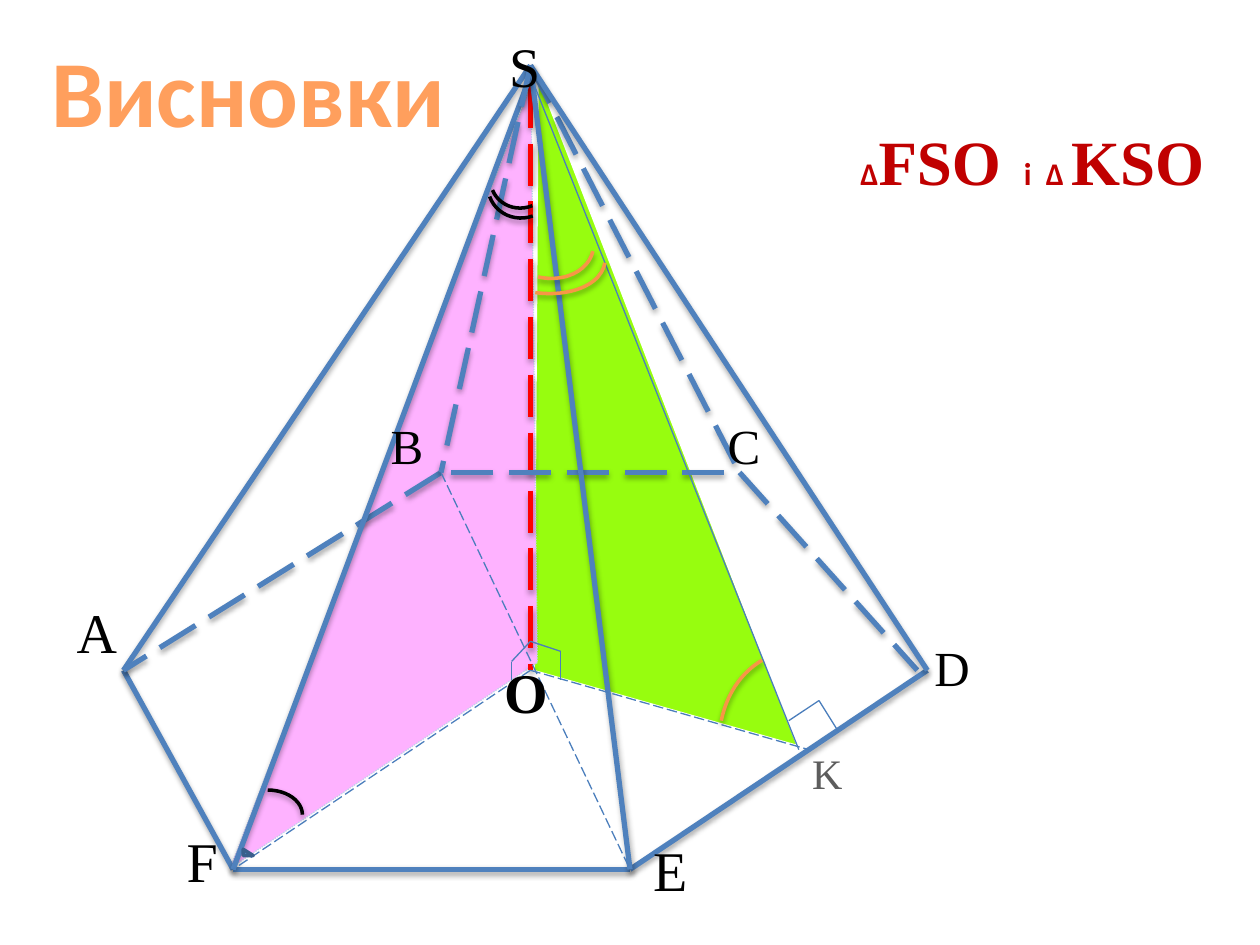
import pptx
import pptx.dml.color
import pptx.enum.dml
import pptx.enum.shapes
import pptx.enum.text
import pptx.oxml
import pptx.oxml.ns
import pptx.util

Inches = pptx.util.Inches
Pt = pptx.util.Pt
Shape = pptx.enum.shapes.MSO_SHAPE
Dash = pptx.enum.dml.MSO_LINE
Align = pptx.enum.text.PP_ALIGN

COLORS = {
    "edge": "4F81BD", "thin": "4B7EBC", "height": "FF0000",
    "green": "97FD0F", "pink": "FEB2FF", "white": "FFFFFF", "pale": "C2D1ED",
    "corner": "3A5F8C", "black": "000000", "orange": "F79646",
    "title": "FF9F5D", "grey": "5D5D5D", "red": "C00000",
}

# Points of the pyramid, in inches from the corner of its box
POINTS = {
    "A": (0, 4.8), "B": (2.52, 3.23), "C": (4.89, 3.23), "D": (6.38, 4.8),
    "E": (4.02, 6.38), "F": (0.87, 6.38), "S": (3.23, 0), "O": (3.23, 4.8),
    "K": (5.36, 5.43),
    # Line ends set slightly off a vertex
    "S low": (3.23, 0.08), "S inner": (3.23, 0.16), "B right": (2.6, 3.23),
    "D left": (6.3, 4.8), "K right": (5.44, 5.43),
}
EDGES = [  # from, to, hidden
    ("A", "F", False), ("F", "E", False), ("A", "S", False),
    ("S", "C", True), ("C", "D left", True), ("B", "A", True),
    ("B right", "C", True), ("D", "E", False), ("S", "D", False),
    ("S", "E", False), ("S low", "F", False), ("S", "B", True),
]
THIN_LINES = [  # from, to, dashed
    ("O", "F", True), ("S low", "K", False), ("O", "K right", True),
    ("B", "E", True),
]
RIGHT_ANGLES = [
    [(3.08, 4.88), (3.08, 4.73), (3.23, 4.57), (3.47, 4.65), (3.47, 4.88)],
    [(5.28, 5.2), (5.52, 5.04), (5.67, 5.28)],
]
ARCS = [  # place, rotation, colour
    ((0.87, 5.75, 0.55, 0.39), 0, "black"),
    ((2.91, 0.66, 0.49, 0.47), 157.5, "black"),
    ((2.89, 0.69, 0.54, 0.52), 160.3, "black"),
    ((3, 0.98, 0.62, 1.03), 97.8, "orange"),
    ((3.06, 1.01, 0.59, 0.76), 102.7, "orange"),
]
LABELS = [  # letter, place, size, bold, colour
    ("S", (2.9, -0.32, 0.57, 0.63), 31.9, False, "black"),
    ("A", (-0.47, 4.17, 0.31, 0.64), 32, False, "black"),
    ("B", (1.74, 2.73, 1.02, 0.57), 28, False, "black"),
    ("C", (4.49, 2.73, 0.87, 0.57), 28, False, "black"),
    ("D", (6.22, 4.49, 0.71, 0.57), 28, False, "black"),
    ("Е", (4.1, 6.06, 0.48, 0.64), 32, False, "black"),
    ("F", (0.4, 5.99, 0.45, 0.64), 32, False, "black"),
    ("O", (2.92, 4.65, 0.55, 0.64), 32, True, "black"),
    ("K", (5.36, 5.36, 0.45, 0.5), 24, False, "grey"),
]


def rgb(name):
    return pptx.dml.color.RGBColor.from_string(COLORS[name])


def set_effects(item, shadow):
    """Give the item its own effect list, empty or with a soft shadow."""
    properties = item._element.spPr
    for old in properties.findall(pptx.oxml.ns.qn("a:effectLst")):
        properties.remove(old)
    inner = (
        '<a:outerShdw blurRad="40000" dist="23000" dir="5400000" rotWithShape="0">'
        '<a:srgbClr val="000000"><a:alpha val="35000"/></a:srgbClr></a:outerShdw>'
    ) if shadow else ""
    properties.append(pptx.oxml.parse_xml(
        f'<a:effectLst {pptx.oxml.ns.nsdecls("a")}>{inner}</a:effectLst>'))


def add_line(page, box, start, end, color, width, dashed=False, shadow=False):
    left, top = box[:2]
    line = page.shapes.add_connector(
        pptx.enum.shapes.MSO_CONNECTOR.STRAIGHT,
        Inches(left + start[0]), Inches(top + start[1]),
        Inches(left + end[0]), Inches(top + end[1]))
    line.line.color.rgb = rgb(color)
    line.line.width = Pt(width)
    if dashed:
        line.line.dash_style = Dash.LONG_DASH
    set_effects(line, shadow)


def add_figure(page, box, kind, place, fill, line, width, rotation=0,
               flips=(), adjustments=(), shadow=False):
    x, y, wide, high = place
    shape = page.shapes.add_shape(
        kind, Inches(box[0] + x), Inches(box[1] + y), Inches(wide), Inches(high))
    shape.rotation = rotation
    for flip in flips:
        shape._element.spPr.xfrm.set(flip, "1")
    for index, value in enumerate(adjustments):
        shape.adjustments[index] = value
    if fill:
        shape.fill.solid()
        shape.fill.fore_color.rgb = rgb(fill)
    else:
        shape.fill.background()
    shape.line.color.rgb = rgb(line)
    shape.line.width = Pt(width)
    set_effects(shape, shadow)
    return shape


def add_text(page, box, spans, align=Align.CENTER, wrap=True):
    """Spans are (text, size, font, bold, colour)."""
    text_box = page.shapes.add_textbox(*[Inches(length) for length in box])
    text_box.text_frame.word_wrap = wrap
    para = text_box.text_frame.paragraphs[0]
    para.alignment = align
    for text, size, font, bold, color in spans:
        span = para.add_run()
        span.text = text
        span.font.size = Pt(size)
        span.font.name = font
        span.font.bold = bold
        span.font.color.rgb = rgb(color)


def draw_triangles(page, box):
    add_figure(page, box, Shape.ISOSCELES_TRIANGLE, (0.63, 2.17, 5.75, 1.75),
               "green", "white", 2, 248.8, ["flipH"], [0.77])
    pink = add_figure(page, box, Shape.ISOSCELES_TRIANGLE, (-0.5, 2.72, 6.66, 1.69),
                      "pink", "pale", 0, 291, ["flipH", "flipV"], [0.64])
    pink.line.dash_style = Dash.ROUND_DOT


def draw_lines(page, box):
    add_line(page, box, POINTS["S inner"], POINTS["O"], "height", 3, True, True)
    for start, end, hidden in EDGES:
        add_line(page, box, POINTS[start], POINTS[end], "edge", 3, hidden, True)
    for start, end, dashed in THIN_LINES:
        add_line(page, box, POINTS[start], POINTS[end], "thin", 0.75, dashed)
    for corners in RIGHT_ANGLES:
        for start, end in zip(corners, corners[1:]):
            add_line(page, box, start, end, "thin", 0.75)


def draw_angles(page, box):
    for place, rotation, color in ARCS:
        add_figure(page, box, Shape.ARC, place, None, color, 2, rotation, shadow=True)
    # Angle at K
    add_figure(page, box, Shape.ARC, (4.73, 4.65, 1.2, 1.42), None, "orange", 2,
               flips=["flipH"], adjustments=[175.3, 206.79], shadow=True)


def draw_pyramid(page, box):
    draw_triangles(page, box)
    draw_lines(page, box)
    # Small mark at F
    add_figure(page, box, Shape.RIGHT_TRIANGLE, (0.95, 6.22, 0.08, 0.05),
               "edge", "corner", 2)
    for letter, (x, y, wide, high), size, bold, color in LABELS:
        add_text(page, (box[0] + x, box[1] + y, wide, high),
                 [(letter, size, "Times New Roman", bold, color)])
    draw_angles(page, box)


def draw_title(page, box):
    add_text(page, box, [("Висновки", 54, "Calibri", True, "title")])


def draw_conclusion(page, box):
    add_text(page, box, [
        ("∆", 18, "Calibri", True, "red"),
        ("FSO ", 36, "Times New Roman", True, "red"),
        (" і  ∆ ", 18, "Calibri", True, "red"),
        ("KSO", 36, "Times New Roman", True, "red"),
    ], Align.LEFT, wrap=False)


def main():
    deck = pptx.Presentation()
    deck.slide_width, deck.slide_height = Inches(10), Inches(7.5)
    page = deck.slides.add_slide(deck.slide_layouts[6])
    draw_pyramid(page, (0.98, 0.52, 6.38, 6.38))
    draw_title(page, (0.2, 0.21, 3.54, 1.01))
    draw_conclusion(page, (6.73, 0.92, 2.96, 0.71))
    deck.save("out.pptx")


if __name__ == "__main__":
    main()
